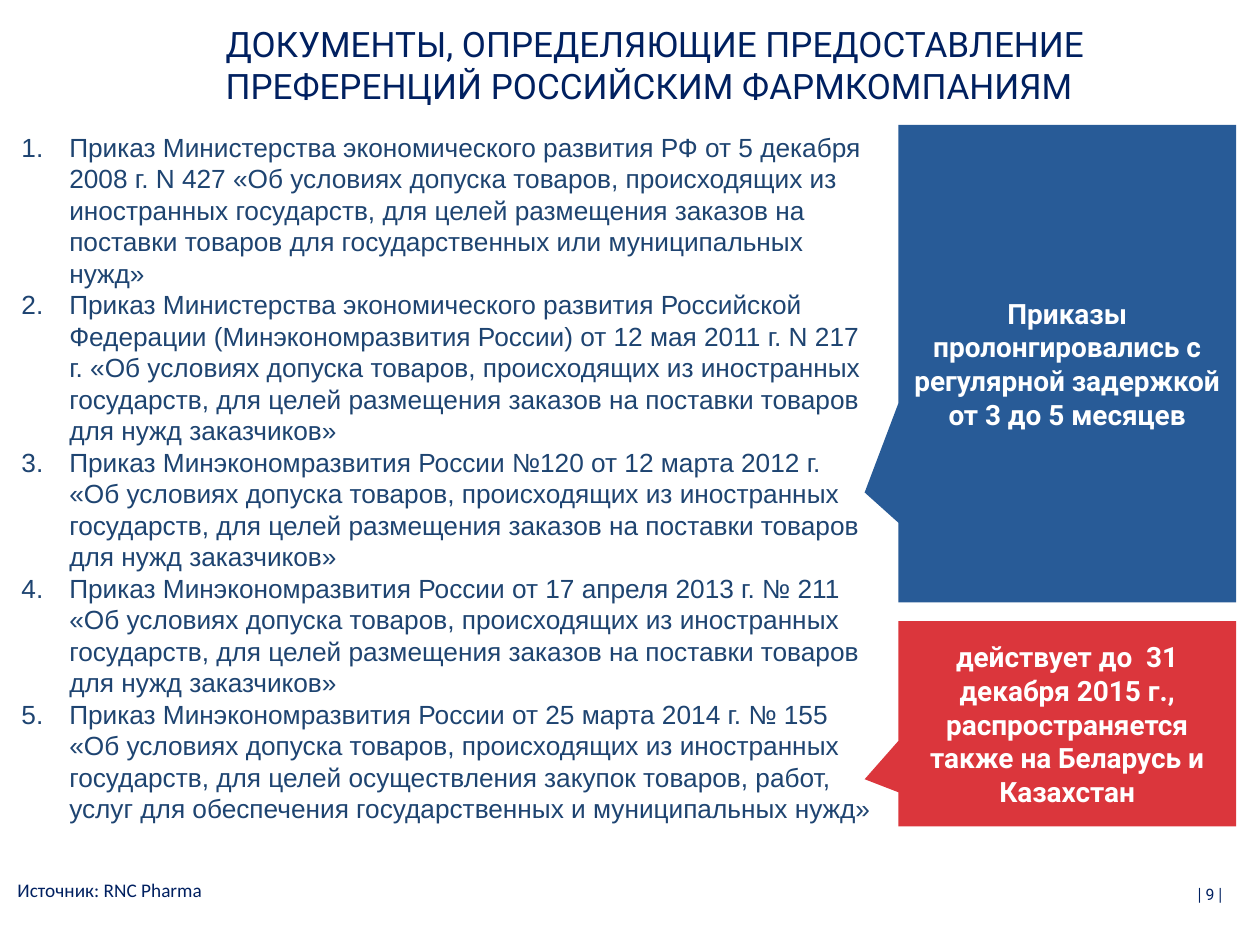
from pptx import Presentation
from pptx.dml.color import RGBColor
from pptx.enum.shapes import MSO_SHAPE
from pptx.enum.text import MSO_ANCHOR, MSO_AUTO_SIZE, PP_ALIGN
from pptx.oxml.ns import qn
from pptx.util import Inches, Pt
from lxml.etree import SubElement

COLORS = {"navy": "002060", "text": "1E4471", "blue": "285B97",
          "red": "DB363C", "white": "FFFFFF"}

TERMS = "«Об условиях допуска товаров, происходящих из иностранных государств, для целей "
ORDERS = "размещения заказов на поставки товаров для "
ITEMS = [
    "Приказ Министерства экономического развития РФ от 5 декабря 2008 г. N 427 "
    + TERMS + ORDERS + "государственных или муниципальных нужд»",
    "Приказ Министерства экономического развития Российской Федерации "
    "(Минэкономразвития России) от 12 мая 2011 г. N 217 г. "
    + TERMS + ORDERS + "нужд заказчиков»",
    "Приказ Минэкономразвития России №120 от 12 марта 2012 г. "
    + TERMS + ORDERS + "нужд заказчиков»",
    "Приказ Минэкономразвития России от 17 апреля 2013 г. № 211 "
    + TERMS + ORDERS + "нужд заказчиков»",
    "Приказ Минэкономразвития России от 25 марта 2014 г. № 155 "
    + TERMS + "осуществления закупок товаров, работ, услуг для обеспечения "
    "государственных и муниципальных нужд»",
]


class Deck:
    def __init__(self):
        self.prs = Presentation()
        self.prs.slide_width, self.prs.slide_height = Inches(10), Inches(7.5)
        self.slide = self.prs.slides.add_slide(self.prs.slide_layouts[1])

    def place(self, shape, box):
        shape.left, shape.top, shape.width, shape.height = map(Inches, box)

    def frame(self, shape, anchor=MSO_ANCHOR.TOP):
        frame = shape.text_frame
        frame.word_wrap = True
        frame.auto_size = MSO_AUTO_SIZE.NONE
        frame.vertical_anchor = anchor
        return frame

    def add_text(self, para, text, size, font, color, bold=False):
        run = para.add_run()
        run.text = text
        run.font.size, run.font.name, run.font.bold = Pt(size), font, bold
        run.font.color.rgb = RGBColor.from_string(COLORS[color])

    def title(self, box, text):
        shape = self.slide.shapes.title
        self.place(shape, box)
        para = self.frame(shape).paragraphs[0]
        para.alignment = PP_ALIGN.LEFT
        self.add_text(para, text, 20, "Roboto", "navy")

    def numbers(self, box, items):
        shape = self.slide.placeholders[1]
        self.place(shape, box)
        frame = self.frame(shape)
        for i, text in enumerate(items):
            para = frame.add_paragraph() if i else frame.paragraphs[0]
            props = para._p.get_or_add_pPr()
            props.set("marL", str(Inches(0.38)))
            props.set("indent", str(-Inches(0.38)))
            SubElement(props, qn("a:buFont"), typeface="Arial")
            SubElement(props, qn("a:buAutoNum"), type="arabicPeriod")
            para.space_before = Pt(0)
            para.line_spacing = Pt(18)
            self.add_text(para, text, 15, "Arial", "text")

    def label(self, box, runs, size, align=PP_ALIGN.LEFT):
        shape = self.slide.shapes.add_textbox(*map(Inches, box))
        para = self.frame(shape).paragraphs[0]
        para.alignment = align
        for text, font in runs:
            self.add_text(para, text, size, font, "navy")

    def callout(self, box, text, fill):
        shape = self.slide.shapes.add_shape(
            MSO_SHAPE.RECTANGULAR_CALLOUT, *map(Inches, box))
        shape.adjustments[0], shape.adjustments[1] = -0.6, 0.27
        shape.shadow.inherit = False
        shape.fill.solid()
        shape.fill.fore_color.rgb = RGBColor.from_string(COLORS[fill])
        shape.line.fill.background()
        para = self.frame(shape, MSO_ANCHOR.MIDDLE).paragraphs[0]
        para.alignment = PP_ALIGN.CENTER
        self.add_text(para, text, 16, "Roboto", "white", True)


def main():
    deck = Deck()

    # Title and numbered list
    deck.title((1.69, 0.13, 8.07, 0.58),
               "ДОКУМЕНТЫ, ОПРЕДЕЛЯЮЩИЕ ПРЕДОСТАВЛЕНИЕ "
               "ПРЕФЕРЕНЦИЙ РОССИЙСКИМ ФАРМКОМПАНИЯМ")
    deck.numbers((0.07, 0.99, 6.98, 5.65), ITEMS)

    # Callouts beside the list
    deck.callout((7.13, 4.93, 2.68, 1.63),
                 "действует до  31 декабря 2015 г., распространяется "
                 "также на Беларусь и Казахстан", "red")
    deck.callout((7.13, 0.99, 2.68, 3.79),
                 "Приказы пролонгировались с регулярной задержкой "
                 "от 3 до 5 месяцев", "blue")

    # Source and page number
    deck.label((0.04, 6.92, 8.15, 0.29),
               [("Источник: RNC Pharma", "Calibri")], 11)
    deck.label((8.62, 6.97, 1.18, 0.4),
               [("| ", "Lato"), ("9", "Roboto"), (" |", "Lato")], 9,
               PP_ALIGN.RIGHT)

    deck.prs.save("out.pptx")


if __name__ == "__main__":
    main()
